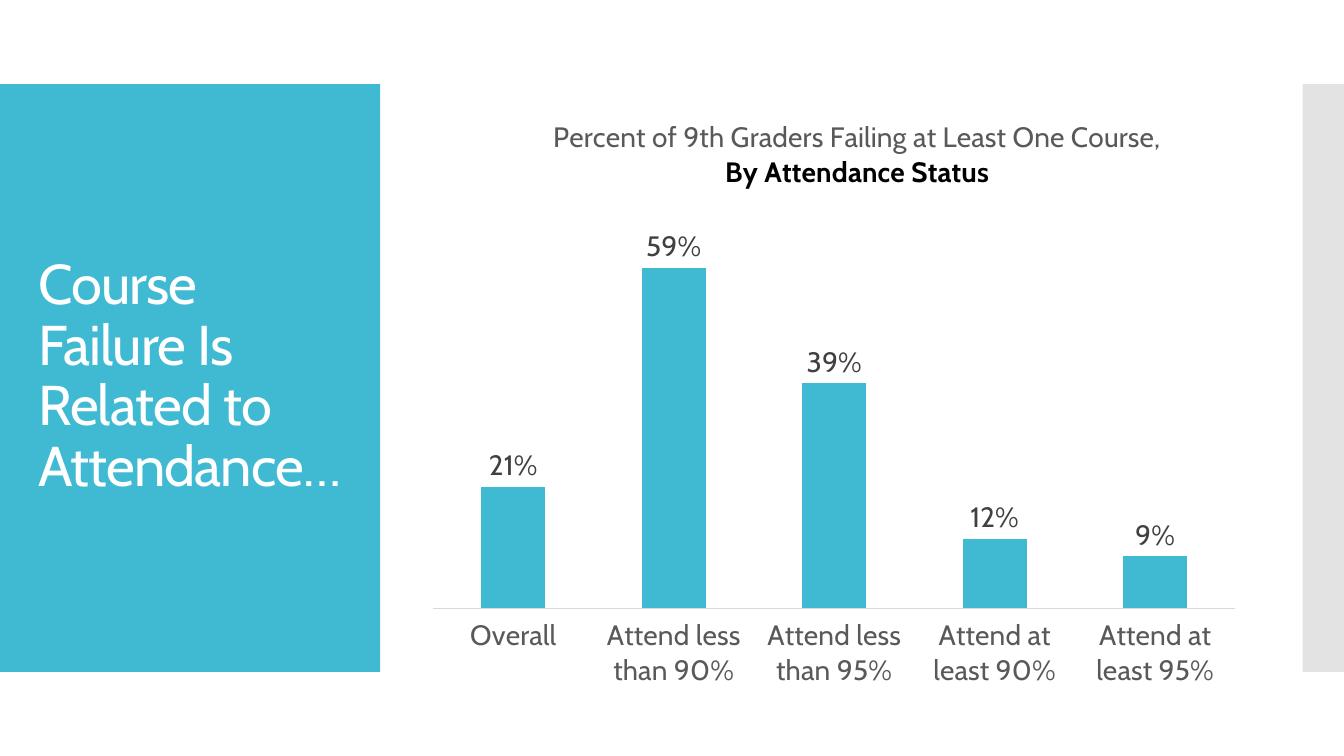
from lxml import etree
from pptx import Presentation
from pptx.chart.data import CategoryChartData
from pptx.dml.color import RGBColor
from pptx.enum.chart import XL_CHART_TYPE, XL_LABEL_POSITION, XL_TICK_LABEL_POSITION, XL_TICK_MARK
from pptx.enum.shapes import MSO_SHAPE
from pptx.enum.text import MSO_ANCHOR, MSO_AUTO_SIZE, PP_ALIGN
from pptx.oxml import parse_xml
from pptx.oxml.ns import nsdecls, qn
from pptx.util import Inches, Pt

COLUMN = XL_CHART_TYPE.COLUMN_CLUSTERED
NO_TICK = XL_TICK_MARK.NONE
RECTANGLE = MSO_SHAPE.RECTANGLE

# Content
HEADLINE = "Course Failure Is Related to Attendance…"
CHART_TITLE = [  # text, bold, colour
    ("Percent of 9th Graders Failing at Least One Course,", False, "label"),
    ("By Attendance Status", True, "black"),
]
FAILURE_RATES = {
    "Overall": 0.21,
    "Attend less than 90%": 0.59,
    "Attend less than 95%": 0.39,
    "Attend at least 90%": 0.12,
    "Attend at least 95%": 0.09,
}
COLORS = {"teal": "40BAD2", "grey": "C8C8C8", "white": "FFFFFF", "black": "000000",
          "label": "595959", "value": "404040", "axis": "D9D9D9"}
FONT = "Cabin"

# Geometry in inches; chart layouts are shares of the chart frame
WIDTH, HEIGHT = 13.33, 7.5
BAND_TOP, BAND_HEIGHT = HEIGHT / 9, HEIGHT * 7 / 9
PANELS = [(0, 3.77, "teal", 100), (12.92, WIDTH - 12.92, "grey", 50)]
HEADLINE_BOX = (0.28, 1.23, 3.22, 5.03)
CHART_BOX = (4.13, 0.97, 8.29, 5.89)
PLOT_LAYOUT = {"x": 0.02, "y": 0.18, "w": 0.96, "h": 0.68}
TITLE_LAYOUT = {"x": 0.16, "y": 0.03}
AXIS_MAX = 0.7


def rgb(name):
    return RGBColor.from_string(COLORS[name])


def style(font, size, color, bold=False):
    font.name, font.size, font.bold = FONT, Pt(size), bold
    font.color.rgb = rgb(color)


def manual_layout(shares, inner=False):
    target = '<c:layoutTarget val="inner"/>' if inner else ""
    modes = "".join(f'<c:{key}Mode val="edge"/>' for key in "xy")
    places = "".join(f'<c:{key} val="{share}"/>' for key, share in shares.items())
    return parse_xml(f'<c:layout {nsdecls("c")}><c:manualLayout>{target}{modes}{places}'
                     "</c:manualLayout></c:layout>")


def set_layout(parent, layout, position):
    for old in parent.findall(qn("c:layout")):
        parent.remove(old)
    parent.insert(position, layout)


prs = Presentation()
prs.slide_width, prs.slide_height = Inches(WIDTH), Inches(HEIGHT)
slide = prs.slides.add_slide(prs.slide_layouts[5])

# Side panels
for left, width, color, opacity in PANELS:
    panel = slide.shapes.add_shape(RECTANGLE, *map(Inches, (left, BAND_TOP, width, BAND_HEIGHT)))
    panel.shadow.inherit = False
    panel.fill.solid()
    panel.fill.fore_color.rgb = rgb(color)
    panel.line.fill.background()
    if opacity < 100:
        color_node = panel._element.spPr.find(".//" + qn("a:srgbClr"))
        etree.SubElement(color_node, qn("a:alpha"), val=str(opacity * 1000))

# Headline, raised above the panels
headline = slide.shapes.title
panel._element.addnext(headline._element)
headline.left, headline.top, headline.width, headline.height = map(Inches, HEADLINE_BOX)
frame = headline.text_frame
frame.word_wrap, frame.auto_size = True, MSO_AUTO_SIZE.NONE
frame.vertical_anchor = MSO_ANCHOR.MIDDLE
paragraph = frame.paragraphs[0]
paragraph.alignment, paragraph.line_spacing = PP_ALIGN.LEFT, 0.9
run = paragraph.add_run()
run.text = HEADLINE
style(run.font, 40, "white")
run.font._element.set("spc", "-60")

# Chart
data = CategoryChartData(number_format="0%")
data.categories = list(FAILURE_RATES)
data.add_series("Series 1", list(FAILURE_RATES.values()))
chart = slide.shapes.add_chart(COLUMN, *map(Inches, CHART_BOX), data).chart
style(chart.font, 10, "black")
chart.has_legend = False

# Chart title
title_frame = chart.chart_title.text_frame
for index, (text, bold, color) in enumerate(CHART_TITLE):
    line = title_frame.add_paragraph() if index else title_frame.paragraphs[0]
    line.alignment = PP_ALIGN.CENTER
    run = line.add_run()
    run.text = text
    style(run.font, 20, color, bold)
chart.chart_title.include_in_layout = False
set_layout(chart.chart_title._element, manual_layout(TITLE_LAYOUT), 1)
set_layout(chart._chartSpace.chart.plotArea, manual_layout(PLOT_LAYOUT, inner=True), 0)

# Axes
categories = chart.category_axis
categories.major_tick_mark = categories.minor_tick_mark = NO_TICK
categories.tick_label_position = XL_TICK_LABEL_POSITION.LOW
categories.format.line.color.rgb = rgb("axis")
categories.format.line.width = Pt(0.75)
style(categories.tick_labels.font, 20, "label")
values = chart.value_axis
values.minimum_scale, values.maximum_scale = 0, AXIS_MAX
values.has_major_gridlines = False
values.visible = False

# Columns and their labels
plot = chart.plots[0]
plot.gap_width, plot.overlap, plot.vary_by_categories = 150, -25, False
series = plot.series[0]
series.format.fill.solid()
series.format.fill.fore_color.rgb = rgb("teal")
labels = series.data_labels
labels.show_value = True
labels.position = XL_LABEL_POSITION.OUTSIDE_END
labels.number_format, labels.number_format_is_linked = "0%", False
style(labels.font, 20, "value")

prs.save("out.pptx")
